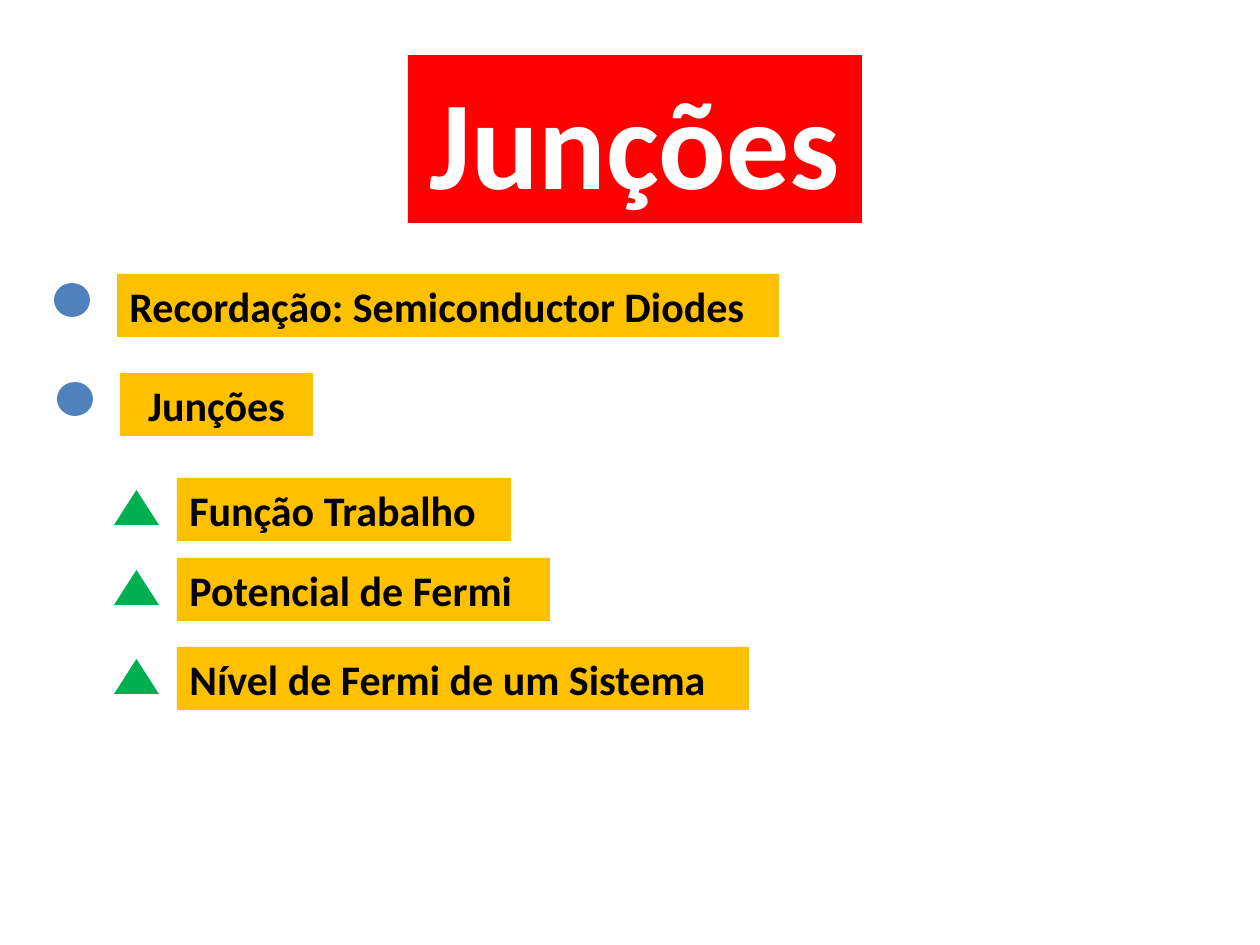
import pptx
import pptx.util
from pptx.dml.color import RGBColor
from pptx.enum.shapes import MSO_SHAPE
from pptx.enum.text import MSO_ANCHOR, PP_ALIGN

PX = pptx.util.Inches(1) / 126
FONT = "Calibri"
WHITE = RGBColor(0xFF, 0xFF, 0xFF)
BLACK = RGBColor(0x00, 0x00, 0x00)
RED = RGBColor(0xFF, 0x00, 0x00)
AMBER = RGBColor(0xFF, 0xC0, 0x00)
BLUE = RGBColor(0x4F, 0x81, 0xBD)
GREEN = RGBColor(0x00, 0xB0, 0x50)

LABEL_HEIGHT = 63
MARKER_GAP = 63  # from the left of a marker to the left of its label


def emu(*lengths):
    return [round(length * PX) for length in lengths]


def add_label(slide, text, box, *, fill, size=24, color=BLACK,
              align=PP_ALIGN.LEFT, anchor=MSO_ANCHOR.TOP):
    label = slide.shapes.add_textbox(*emu(*box))
    label.fill.solid()
    label.fill.fore_color.rgb = fill
    frame = label.text_frame
    frame.word_wrap = True
    frame.vertical_anchor = anchor
    paragraph = frame.paragraphs[0]
    paragraph.alignment = align
    run = paragraph.add_run()
    run.text = text
    run.font.name = FONT
    run.font.size = pptx.util.Pt(size)
    run.font.bold = True
    run.font.color.rgb = color


def add_marker(slide, kind, box, fill):
    marker = slide.shapes.add_shape(kind, *emu(*box))
    marker.shadow.inherit = False
    marker.fill.solid()
    marker.fill.fore_color.rgb = fill
    marker.line.fill.background()


def add_title(slide, box):
    add_label(slide, "Junções", box, fill=RED, size=72, color=WHITE,
              align=PP_ALIGN.CENTER, anchor=MSO_ANCHOR.MIDDLE)


def add_topic(slide, text, left, top, width, align=PP_ALIGN.LEFT):
    add_label(slide, text, (left, top, width, LABEL_HEIGHT), fill=AMBER, align=align)
    add_marker(slide, MSO_SHAPE.OVAL, (left - MARKER_GAP, top + 9, 36, 34), BLUE)


def add_subtopic(slide, text, left, top, width):
    add_label(slide, text, (left, top, width, LABEL_HEIGHT), fill=AMBER)
    add_marker(slide, MSO_SHAPE.ISOSCELES_TRIANGLE,
               (left - MARKER_GAP, top + 12, 45, 35), GREEN)


def main():
    deck = pptx.Presentation()
    deck.slide_width, deck.slide_height = emu(1260, 945)
    slide = deck.slides.add_slide(deck.slide_layouts[6])

    # Title
    add_title(slide, (408, 55, 454, 168))

    # Main topics
    add_topic(slide, "Recordação: Semiconductor Diodes", 117, 274, 662)
    add_topic(slide, "Junções", 120, 373, 193, align=PP_ALIGN.CENTER)

    # Subtopics of the second topic
    for text, top, width in (
        ("Função Trabalho", 478, 334),
        ("Potencial de Fermi", 558, 373),
        ("Nível de Fermi de um Sistema", 647, 572),
    ):
        add_subtopic(slide, text, 177, top, width)

    deck.save("out.pptx")


if __name__ == "__main__":
    main()
